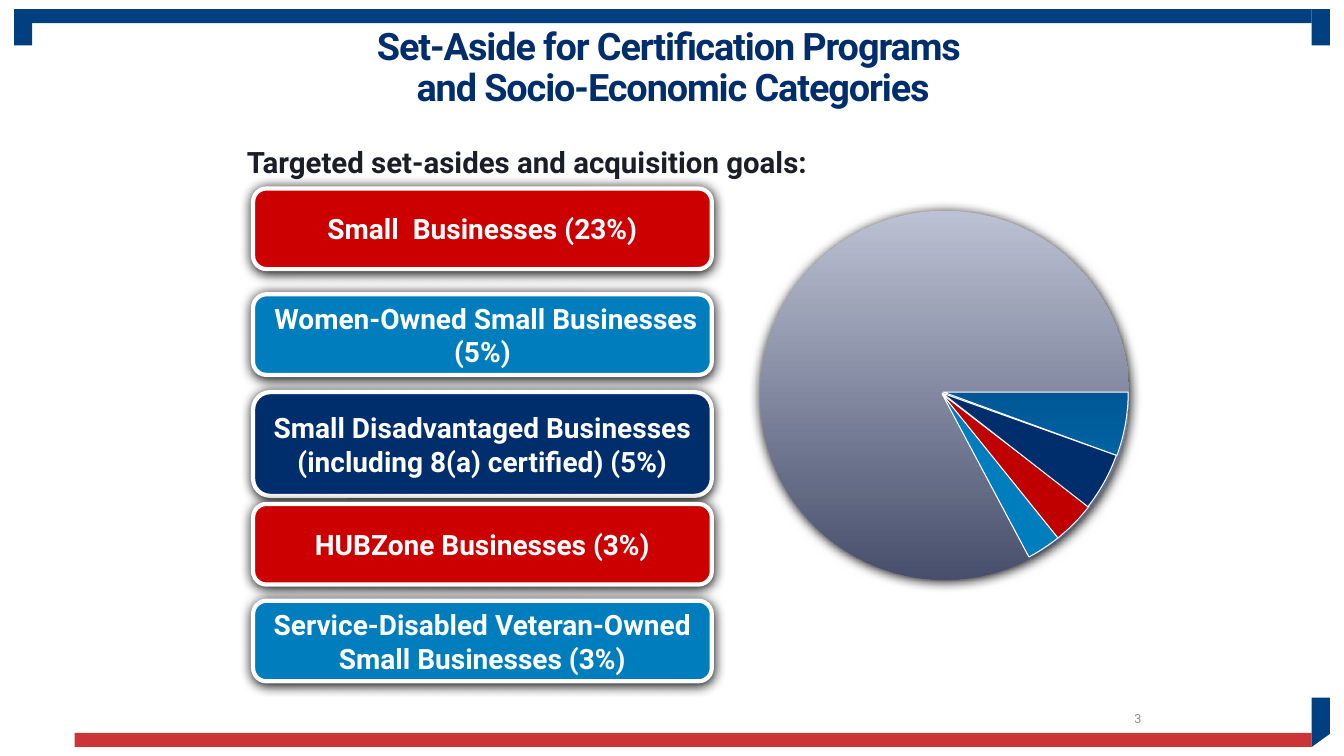
from dataclasses import dataclass

from lxml.etree import SubElement
from pptx import Presentation
from pptx.dml.color import RGBColor
from pptx.enum.shapes import MSO_SHAPE
from pptx.enum.text import MSO_ANCHOR, PP_ALIGN
from pptx.oxml.ns import qn
from pptx.util import Inches, Pt


@dataclass(frozen=True)
class Theme:
    font: str = "Roboto"
    frame_blue: str = "003F80"
    frame_red: str = "CC3538"
    navy: str = "002E6D"
    blue: str = "007DBC"
    red: str = "CC0000"
    dark_red: str = "C00000"
    pale_slate: str = "BCC1D3"
    slate: str = "474F6C"
    ink: str = "1B1E29"
    grey: str = "8D8D8E"
    white: str = "FFFFFF"
    title_size: float = 27
    lead_size: float = 21
    goal_size: float = 20
    number_size: float = 9


THEME = Theme()


def color(code):
    return RGBColor.from_string(code)


def paint(shape, fill, line=None, line_width=0.75):
    """Fill with one colour, or with a top-to-bottom pair of colours."""
    shape.shadow.inherit = False
    if isinstance(fill, tuple):
        shape.fill.gradient()
        shape.fill.gradient_angle = 270
        for stop, position, code in zip(shape.fill.gradient_stops, (0, 1), fill):
            stop.position = position
            stop.color.rgb = color(code)
    else:
        shape.fill.solid()
        shape.fill.fore_color.rgb = color(fill)
    if line:
        shape.line.color.rgb = color(line)
        shape.line.width = Pt(line_width)
    else:
        shape.line.fill.background()


def add_shadow(shape):
    effects = shape.element.spPr.find(qn("a:effectLst"))
    shadow = SubElement(effects, qn("a:outerShdw"), blurRad=str(Pt(8.5)),
                        dist=str(Pt(1)), dir="5400000", algn="ctr", rotWithShape="0")
    SubElement(shadow, qn("a:srgbClr"), val="000000")


def add_preset(page, kind, box):
    return page.shapes.add_shape(kind, *(Inches(value) for value in box))


def add_span(para, text, size, code, bold=True, spacing=None):
    span = para.add_run()
    span.text = text
    span.font.name = THEME.font
    span.font.size = Pt(size)
    span.font.bold = bold
    span.font.color.rgb = color(code)
    if spacing is not None:
        span.font._element.set("spc", str(round(spacing * 100)))


def add_text_box(page, box, align, anchor=MSO_ANCHOR.TOP):
    frame = page.shapes.add_textbox(*(Inches(value) for value in box)).text_frame
    frame.word_wrap = True
    frame.vertical_anchor = anchor
    para = frame.paragraphs[0]
    para.alignment = align
    return para


def draw_frame(page, box):
    left, top, width, height = box
    right, bottom = left + width, top + height
    bar, corner_width, corner_height = 0.14, 0.18, 0.36
    tail_left = right - corner_width

    # Top bar, its two corners and the bottom bar
    for part, code in (
        ((left, top, width - corner_width, bar), THEME.frame_blue),
        ((tail_left, top, corner_width, corner_height), THEME.frame_blue),
        ((left, top, corner_width, corner_height), THEME.frame_blue),
        ((left + 0.6, bottom - bar, 12.27, bar), THEME.frame_red),
    ):
        paint(add_preset(page, MSO_SHAPE.RECTANGLE, part), code)

    # Slanted corner at the bottom right
    points = [(Inches(x), Inches(y)) for x, y in (
        (tail_left, bottom - 0.49), (right, bottom - 0.49),
        (right, bottom - 0.13), (tail_left, bottom))]
    builder = page.shapes.build_freeform(*points[0])
    builder.add_line_segments(points[1:], close=True)
    paint(builder.convert_to_shape(), THEME.frame_blue)


def draw_title(page, box):
    para = add_text_box(page, box, PP_ALIGN.CENTER)
    para.line_spacing = 0.9
    add_span(para, "Set-Aside for Certification Programs ",
             THEME.title_size, THEME.navy, spacing=-0.8)
    para.add_line_break()
    add_span(para, "and Socio-Economic Categories",
             THEME.title_size, THEME.navy, spacing=-0.8)


def draw_lead(page, box):
    para = add_text_box(page, box, PP_ALIGN.LEFT)
    para.line_spacing = 0.9
    para.space_before = Pt(7.5)
    add_span(para, "Targeted set-asides and acquisition goals:",
             THEME.lead_size, THEME.ink)


def draw_goals(page, box):
    left, top, width, row_height = box
    goals = (  # offset from the top, height, fill, text
        (0, row_height, THEME.red, "Small  Businesses (23%)"),
        (1.05, row_height, THEME.blue, " Women-Owned Small Businesses (5%)"),
        (2.02, 1.03, THEME.navy,
         "Small Disadvantaged Businesses (including 8(a) certified) (5%)"),
        (3.13, row_height, THEME.red, "HUBZone Businesses (3%)"),
        (4.09, row_height, THEME.blue,
         "Service-Disabled Veteran-Owned Small Businesses (3%)"),
    )
    for offset, height, fill, text in goals:
        button = add_preset(page, MSO_SHAPE.ROUNDED_RECTANGLE,
                            (left, top + offset, width, height))
        paint(button, fill, THEME.white, 3)
        add_shadow(button)
        frame = button.text_frame
        frame.word_wrap = True
        frame.vertical_anchor = MSO_ANCHOR.MIDDLE
        para = frame.paragraphs[0]
        para.alignment = PP_ALIGN.CENTER
        add_span(para, text, THEME.goal_size, THEME.white)


def draw_pie(page, box):
    left, top, size, _ = box

    # Whole disc
    disc = add_preset(page, MSO_SHAPE.OVAL, (left + 0.03, top + 0.01, 3.66, 3.66))
    paint(disc, (THEME.pale_slate, THEME.slate))
    add_shadow(disc)

    # Wedges: shift right, shift down, start and end in degrees, fill
    wedges = (
        (0, 0, 49.86, 61.96, THEME.blue),
        (0, 0, 37.47, 51.19, THEME.dark_red),
        (0.01, -0.02, 0, 20.11, (THEME.navy, THEME.blue)),
        (0, -0.01, 19.68, 37.96, THEME.navy),
    )
    for right, down, start, end, fill in wedges:
        wedge = add_preset(page, MSO_SHAPE.PIE,
                           (left + right, top + down, size, 3.66))
        # Angles are stored in 60000ths of a degree, adjustments in 100000ths
        wedge.adjustments[0] = start * 0.6
        wedge.adjustments[1] = end * 0.6
        paint(wedge, fill, THEME.white)


def draw_page_number(page, box):
    para = add_text_box(page, box, PP_ALIGN.RIGHT, MSO_ANCHOR.MIDDLE)
    add_span(para, "3", THEME.number_size, THEME.grey, bold=False)


def main():
    deck = Presentation()
    deck.slide_width, deck.slide_height = Inches(13.33), Inches(7.5)
    page = deck.slides.add_slide(deck.slide_layouts[6])
    draw_frame(page, (0.14, 0.09, 13.05, 7.32))
    draw_title(page, (2.15, 0.23, 9.05, 0.65))
    draw_lead(page, (2.35, 1.42, 8.62, 5.69))
    draw_goals(page, (2.51, 1.87, 4.55, 0.8))
    draw_pie(page, (7.51, 2.08, 3.67, 3.66))
    draw_page_number(page, (9.17, 6.93, 2.25, 0.4))
    deck.save("out.pptx")


if __name__ == "__main__":
    main()
